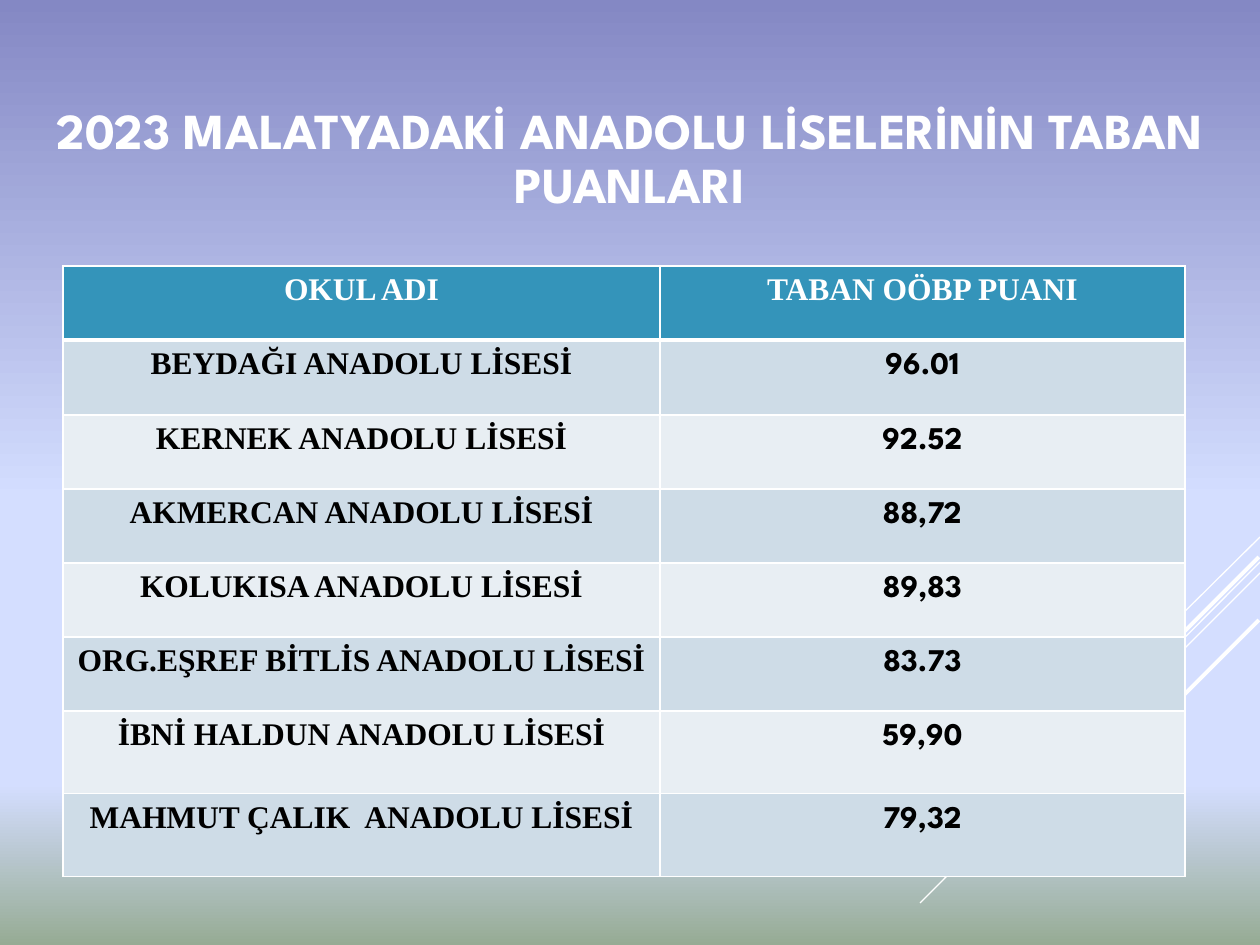
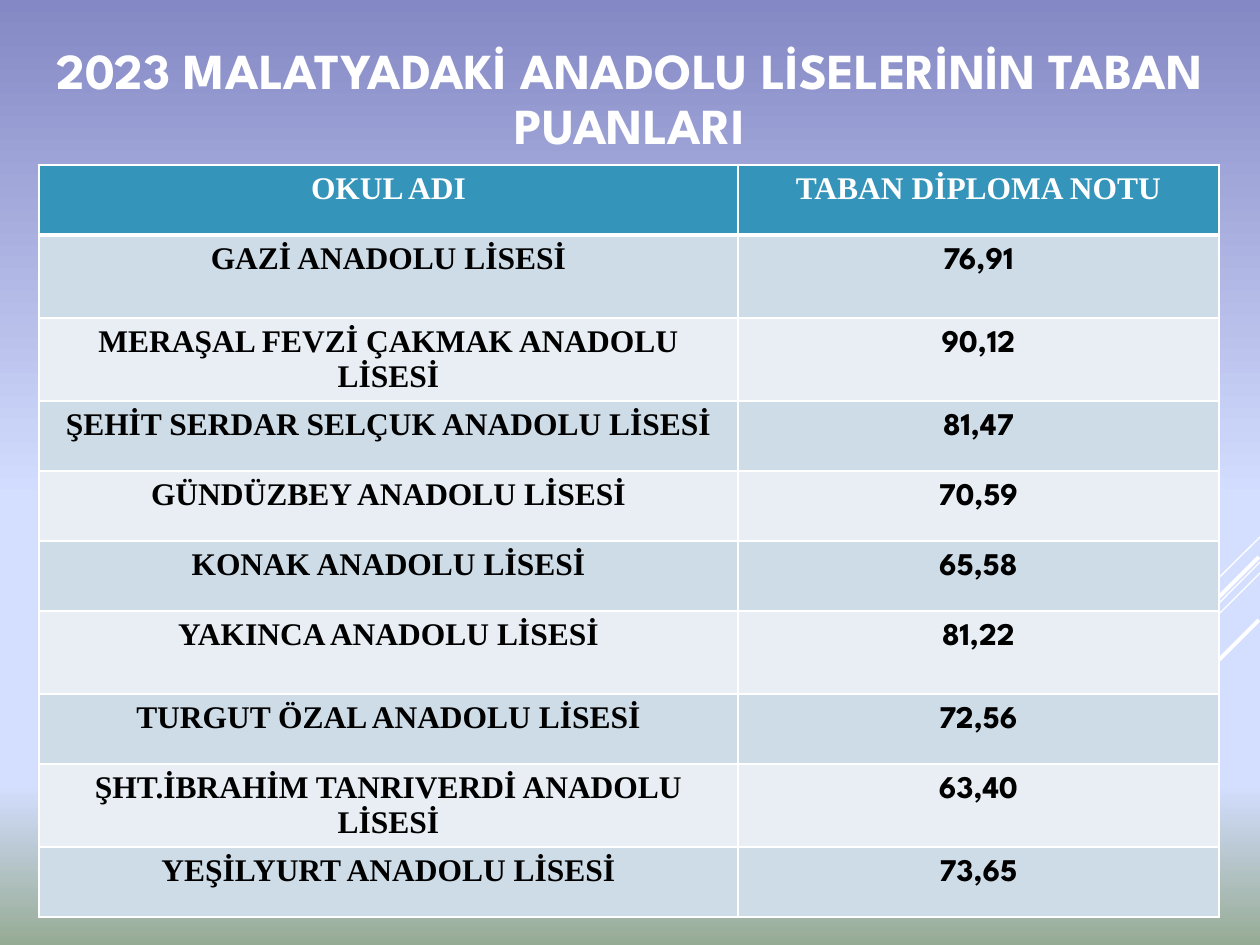
import copy
import pptx
import pptx.dml.color
import pptx.enum.shapes
import pptx.enum.text
import pptx.oxml
import pptx.oxml.ns
import pptx.util

SCALE = 914400 / 126  # EMU in one px
SANS, SERIF = "League Spartan", "Times New Roman"
WHITE, BLACK, TEAL = "FFFFFF", "000000", "3494BA"
BANDS = ["CEDCE7", "E8EEF3"]
SKY = [(0, "8488C4"), (0.53, "D4DEFF"), (0.83, "D4DEFF"), (1, "96AB94")]
TITLE = "2023 MALATYADAKİ ANADOLU LİSELERİNİN TABAN PUANLARI"

# Slanted lines at the right: start x, start y, end x, end y, width in points
RAYS = [
    (1260, 537, 1155, 641, 0.75),
    (1260, 562, 920, 903, 0.75),
    (1260, 573, 1043, 790, 0.75),
    (1259, 557, 1061, 755, 2.25),
    (1259, 620, 1115, 764, 2.25),
]

PAGES = [
    {
        "title top": 97, "left": 63, "top": 266, "cols": [597, 525],
        "highs": [74, 75, 74, 74, 74, 74, 83, 83],
        "rows": [
            ("OKUL ADI", "TABAN OÖBP PUANI"),
            ("BEYDAĞI ANADOLU LİSESİ", "96.01"),
            ("KERNEK ANADOLU LİSESİ", "92.52"),
            ("AKMERCAN ANADOLU LİSESİ", "88,72"),
            ("KOLUKISA ANADOLU LİSESİ", "89,83"),
            ("ORG.EŞREF BİTLİS ANADOLU LİSESİ", "83.73"),
            ("İBNİ HALDUN ANADOLU LİSESİ", "59,90"),
            ("MAHMUT ÇALIK  ANADOLU LİSESİ", "79,32"),
        ],
    },
    {
        "title top": 37, "left": 39, "top": 165, "cols": [699, 481],
        "highs": [70, 83, 83, 70, 70, 70, 83, 70, 83, 70],
        "rows": [
            ("OKUL ADI", "TABAN DİPLOMA NOTU"),
            ("GAZİ ANADOLU LİSESİ", "76,91"),
            ("MERAŞAL FEVZİ ÇAKMAK ANADOLU LİSESİ", "90,12"),
            ("ŞEHİT SERDAR SELÇUK ANADOLU LİSESİ", "81,47"),
            ("GÜNDÜZBEY ANADOLU LİSESİ", "70,59"),
            ("KONAK ANADOLU LİSESİ", "65,58"),
            ("YAKINCA ANADOLU LİSESİ", "81,22"),
            ("TURGUT ÖZAL ANADOLU LİSESİ", "72,56"),
            ("ŞHT.İBRAHİM TANRIVERDİ ANADOLU LİSESİ", "63,40"),
            ("YEŞİLYURT ANADOLU LİSESİ", "73,65"),
        ],
    },
]


def color(code):
    return pptx.dml.color.RGBColor.from_string(code)


def write(frame, text, face, size, ink, pitch):
    para = frame.paragraphs[0]
    para.alignment = pptx.enum.text.PP_ALIGN.CENTER
    para.line_spacing = pitch
    run = para.add_run()
    run.text = text
    look = {"name": face, "size": pptx.util.Pt(size), "bold": True}
    for key, value in look.items():
        setattr(run.font, key, value)
    run.font.color.rgb = color(ink)


deck = pptx.Presentation()
deck.slide_width = round(1260 * SCALE)
deck.slide_height = round(945 * SCALE)

for page in PAGES:
    slide = deck.slides.add_slide(deck.slide_layouts[6])

    # Background gradient, top to bottom
    fill = slide.background.fill
    fill.gradient()
    fill.gradient_angle = 270
    stops = slide.element.xpath(".//a:gsLst")[0]
    for extra in range(len(SKY) - len(stops)):
        stops.append(copy.deepcopy(stops[0]))
    for stop, (place, code) in zip(fill.gradient_stops, SKY):
        stop.position = place
        stop.color.rgb = color(code)

    # Slanted lines
    for *ends, width in RAYS:
        ray = slide.shapes.add_connector(
            pptx.enum.shapes.MSO_CONNECTOR.STRAIGHT, *[round(n * SCALE) for n in ends])
        ray.line.color.rgb = color(WHITE)
        ray.line.width = pptx.util.Pt(width)
        ray.element.spPr.append(pptx.oxml.parse_xml(
            f'<a:effectLst {pptx.oxml.ns.nsdecls("a")}/>'))

    # Title
    box = [round(n * SCALE) for n in (0, page["title top"], 1260, 127)]
    frame = slide.shapes.add_textbox(*box).text_frame
    setup = {"word_wrap": True, "margin_top": 0, "margin_bottom": 0,
             "vertical_anchor": pptx.enum.text.MSO_ANCHOR.MIDDLE}
    for key, value in setup.items():
        setattr(frame, key, value)
    write(frame, TITLE, SANS, 28.8, WHITE, 0.9)

    # Score table
    rows, cols, highs = page["rows"], page["cols"], page["highs"]
    area = [round(n * SCALE) for n in (page["left"], page["top"], sum(cols), sum(highs))]
    table = slide.shapes.add_table(len(rows), len(cols), *area).table
    for col, wide in zip(table.columns, cols):
        col.width = round(wide * SCALE)
    for r, (names, high) in enumerate(zip(rows, highs)):
        table.rows[r].height = round(high * SCALE)
        for c, text in enumerate(names):
            cell = table.cell(r, c)
            cell.fill.solid()
            cell.fill.fore_color.rgb = color(BANDS[(r - 1) % 2] if r else TEAL)
            face = SANS if r and c else SERIF
            write(cell.text_frame, text, face, 18, BLACK if r else WHITE, pptx.util.Pt(20))

            # White borders, thick under the heading row
            for spot, side in enumerate("LRTB"):
                thick = (r, side) in [(0, "B"), (1, "T")]
                width = pptx.util.Pt(3 if thick else 1)
                edge = pptx.oxml.parse_xml(
                    f'<a:ln{side} {pptx.oxml.ns.nsdecls("a")} w="{width}"><a:solidFill>'
                    f'<a:srgbClr val="{WHITE}"/></a:solidFill></a:ln{side}>')
                cell._tc.get_or_add_tcPr().insert(spot, edge)

deck.save("out.pptx")
